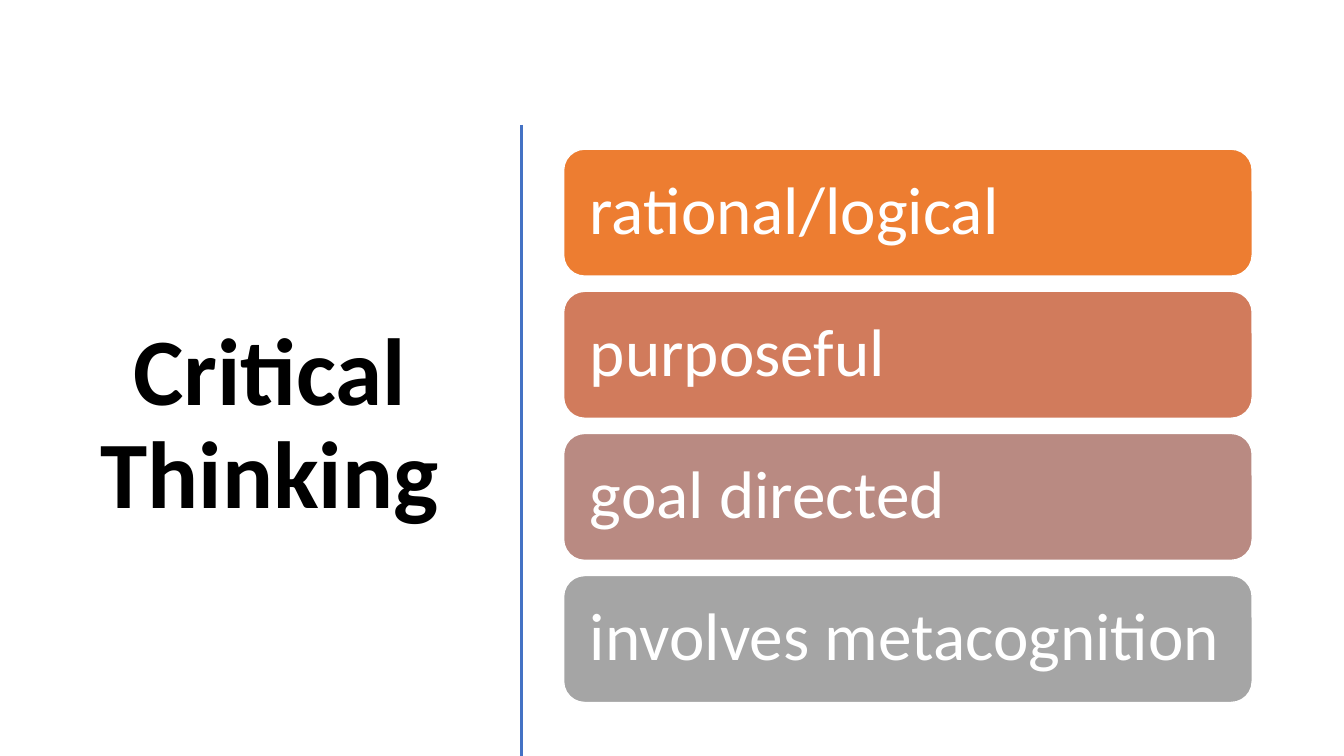
from dataclasses import dataclass

from lxml.etree import SubElement
from pptx import Presentation
from pptx.dml.color import RGBColor
from pptx.enum.shapes import MSO_CONNECTOR as Connector, MSO_SHAPE as Shape
from pptx.enum.text import MSO_ANCHOR as Anchor, PP_ALIGN as Align
from pptx.oxml.ns import qn
from pptx.util import Inches, Pt

# Content
TITLE = "Critical Thinking"
TRAITS = [
    ("rational/logical", "ED7D31"),
    ("purposeful", "D17B5C"),
    ("goal directed", "B98A82"),
    ("involves metacognition", "A5A5A5"),
]


@dataclass(frozen=True)
class Theme:
    font: str = "Calibri"
    title_size: int = 68
    trait_size: int = 48
    title_color: str = "000000"
    trait_color: str = "FFFFFF"
    divider_color: str = "4472C4"
    line_spacing: float = 0.9


THEME = Theme()

# Layout, in inches
SLIDE_W, SLIDE_H = 13.33, 7.5
TITLE_BOX = (0.52, 1.17, 4.31, 6.11)
DIVIDER_X, DIVIDER_TOP = 5.17, 1.24
TRAIT_LEFT, TRAIT_TOP, TRAIT_W, TRAIT_H = 5.59, 1.48, 6.83, 1.26
TRAIT_PITCH = 1.41
TRAIT_INSET = 0.2


def write(frame, text, size, color, align, bold=False):
    frame.word_wrap = True
    frame.vertical_anchor = Anchor.MIDDLE
    paragraph = frame.paragraphs[0]
    paragraph.text = text
    paragraph.alignment = align
    paragraph.line_spacing = THEME.line_spacing
    font = paragraph.font
    font.name, font.size, font.bold = THEME.font, Pt(size), bold
    font.color.rgb = RGBColor.from_string(color)


def add_divider(slide):
    x = Inches(DIVIDER_X)
    divider = slide.shapes.add_connector(
        Connector.STRAIGHT, x, Inches(DIVIDER_TOP), x, Inches(SLIDE_H))
    divider.line.color.rgb = RGBColor.from_string(THEME.divider_color)
    divider.line.width = Pt(2)
    SubElement(divider.line._get_or_add_ln().getparent(), qn("a:effectLst"))


def add_trait(slide, row, text, fill):
    top = TRAIT_TOP + row * TRAIT_PITCH
    trait = slide.shapes.add_shape(
        Shape.ROUNDED_RECTANGLE,
        *map(Inches, (TRAIT_LEFT, top, TRAIT_W, TRAIT_H)))
    trait.shadow.inherit = False
    trait.fill.solid()
    trait.fill.fore_color.rgb = RGBColor.from_string(fill)
    trait.line.color.rgb = RGBColor.from_string(THEME.trait_color)
    trait.line.width = Pt(1)
    frame = trait.text_frame
    frame.margin_left = frame.margin_right = Inches(TRAIT_INSET)
    frame.margin_top = frame.margin_bottom = Inches(TRAIT_INSET)
    write(frame, text, THEME.trait_size, THEME.trait_color, Align.LEFT)


def main():
    deck = Presentation()
    deck.slide_width, deck.slide_height = Inches(SLIDE_W), Inches(SLIDE_H)
    slide = deck.slides.add_slide(deck.slide_layouts[6])

    # Title and divider
    title = slide.shapes.add_textbox(*map(Inches, TITLE_BOX))
    write(title.text_frame, TITLE, THEME.title_size, THEME.title_color,
          Align.CENTER, bold=True)
    add_divider(slide)

    # Stack of traits
    for row, (text, fill) in enumerate(TRAITS):
        add_trait(slide, row, text, fill)

    deck.save("out.pptx")


if __name__ == "__main__":
    main()
